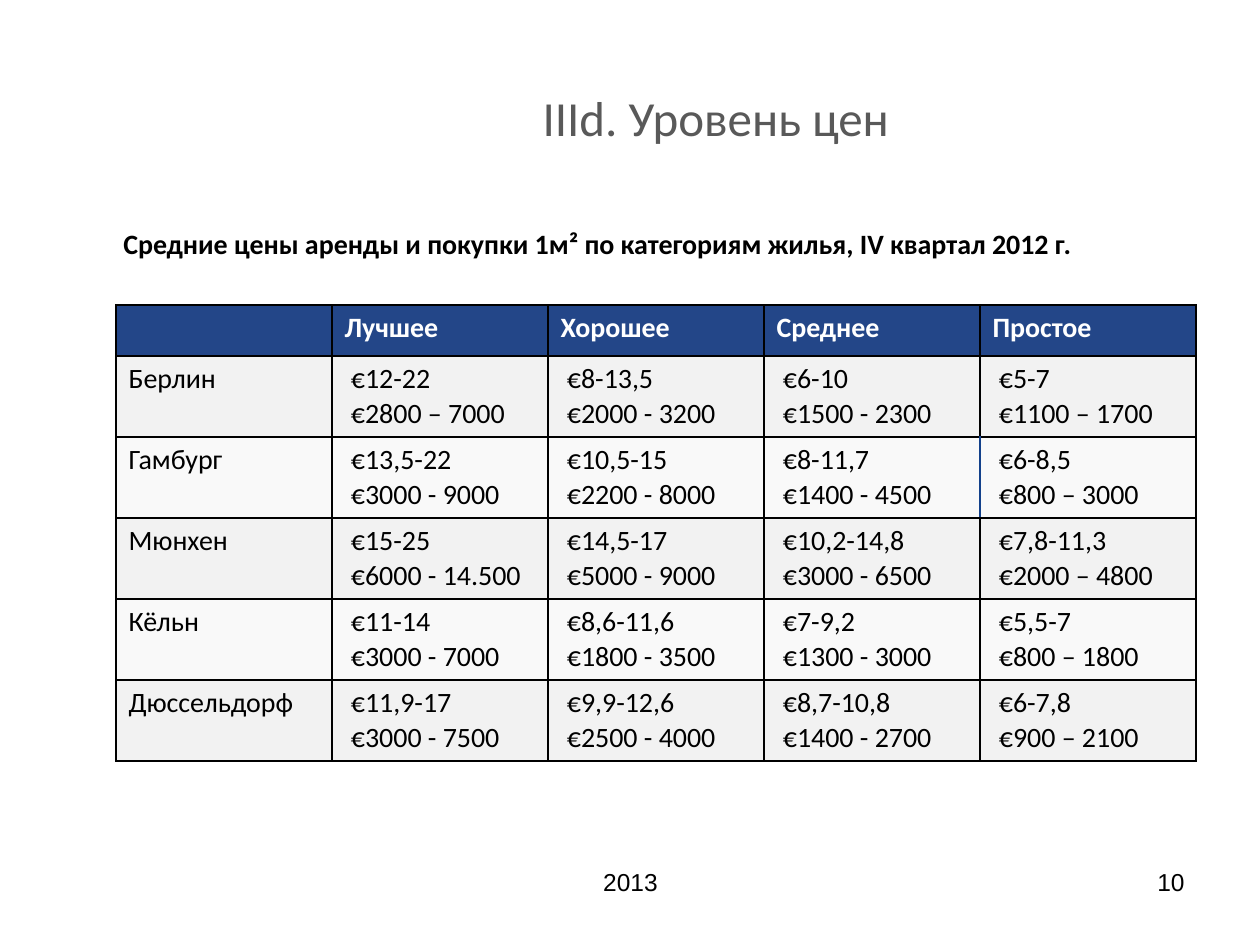
"""Build a slide with a table of housing prices in German cities."""
from dataclasses import dataclass

import pptx
import pptx.dml.color
import pptx.enum.text
import pptx.oxml.ns
import pptx.util
from lxml import etree

ALIGN = pptx.enum.text.PP_ALIGN
ANCHOR = pptx.enum.text.MSO_ANCHOR
SCALE = 914400 // 126


@dataclass(frozen=True)
class Theme:
    black: str = "000000"
    white: str = "FFFFFF"
    gray: str = "595959"
    navy: str = "234688"
    blue: str = "13418B"
    bands: tuple[str, str] = ("F2F2F2", "F9F9F9")
    face: str = "Calibri"
    plain: str = "Arial"
    title: int = 28
    body: int = 16
    foot: int = 14


@dataclass(frozen=True)
class Box:
    x: int
    y: int
    w: int
    h: int

    def emu(self) -> tuple[int, ...]:
        return tuple(px(n) for n in (self.x, self.y, self.w, self.h))


@dataclass(frozen=True)
class Style:
    size: int
    color: str
    face: str
    bold: bool = False
    align: ALIGN = ALIGN.LEFT


@dataclass(frozen=True)
class Label:
    text: str
    box: Box
    style: Style


@dataclass(frozen=True)
class City:
    name: str
    prices: tuple[str, ...]


THEME = Theme()
HEAD = Style(THEME.body, THEME.white, THEME.face, True)
CELL = Style(THEME.body, THEME.black, THEME.face)
BOLD = Style(THEME.body, THEME.black, THEME.face, True)
TITLE = Label("IIId. Уровень цен", Box(530, 38, 667, 158),
              Style(THEME.title, THEME.gray, THEME.face))
LABELS = (
    Label("Средние цены аренды и покупки 1м² по категориям жилья, IV квартал 2012 г.",
          Box(111, 220, 1086, 83), BOLD),
    Label("10", Box(903, 861, 294, 66),
          Style(THEME.foot, THEME.black, THEME.plain, align=ALIGN.RIGHT)),
    Label("2013", Box(431, 861, 399, 66),
          Style(THEME.foot, THEME.black, THEME.plain, align=ALIGN.CENTER)),
)
GRID = Box(116, 305, 1080, 456)
TOP_ROW, ROW, INDENT = 51, 81, 19
HEADS = ("", "Лучшее", "Хорошее", "Среднее", "Простое")
CITIES = (
    City("Берлин", ("€12-22\n€2800 – 7000", "€8-13,5\n€2000 - 3200",
                    "€6-10\n€1500 - 2300", "€5-7\n€1100 – 1700")),
    City("Гамбург", ("€13,5-22\n€3000 - 9000", "€10,5-15\n€2200 - 8000",
                     "€8-11,7\n€1400 - 4500", "€6-8,5\n€800 – 3000")),
    City("Мюнхен", ("€15-25\n€6000 - 14.500", "€14,5-17\n€5000 - 9000",
                    "€10,2-14,8\n€3000 - 6500", "€7,8-11,3\n€2000 – 4800")),
    City("Кёльн", ("€11-14\n€3000 - 7000", "€8,6-11,6\n€1800 - 3500",
                   "€7-9,2\n€1300 - 3000", "€5,5-7\n€800 – 1800")),
    City("Дюссельдорф", ("€11,9-17\n€3000 - 7500", "€9,9-12,6\n€2500 - 4000",
                         "€8,7-10,8\n€1400 - 2700", "€6-7,8\n€900 – 2100")),
)
ACCENTS = {(2, 3): "R", (2, 4): "L"}


def px(count: int) -> int:
    return pptx.util.Emu(count * SCALE)


def rgb(color: str) -> pptx.dml.color.RGBColor:
    return pptx.dml.color.RGBColor.from_string(color)


def write(frame, text: str, style: Style) -> None:
    frame.text = text
    for para in frame.paragraphs:
        para.alignment = style.align
        font = para.font
        font.size = pptx.util.Pt(style.size)
        font.name = style.face
        font.bold = style.bold
        font.color.rgb = rgb(style.color)


def place(slide, label: Label) -> None:
    frame = slide.shapes.add_textbox(*label.box.emu()).text_frame
    frame.word_wrap = True
    write(frame, label.text, label.style)


def border(cell, accent: str) -> None:
    name = pptx.oxml.ns.qn
    props = cell._tc.get_or_add_tcPr()
    for side in "LRTB":
        line = etree.SubElement(props, name(f"a:ln{side}"), w="12700")
        fill = etree.SubElement(line, name("a:solidFill"))
        color = THEME.blue if side == accent else THEME.black
        etree.SubElement(fill, name("a:srgbClr"), val=color)


def paint(cell, text: str, style: Style, fill: str, accent: str) -> None:
    write(cell.text_frame, text, style)
    border(cell, accent)
    cell.fill.solid()
    cell.fill.fore_color.rgb = rgb(fill)


def tabulate(slide) -> None:
    rows = [HEADS] + [(city.name, *city.prices) for city in CITIES]
    table = slide.shapes.add_table(len(rows), len(HEADS), *GRID.emu()).table
    table.first_row = table.horz_banding = False
    for col in table.columns:
        col.width = px(GRID.w // len(HEADS))
    for r, texts in enumerate(rows):
        table.rows[r].height = px(ROW if r else TOP_ROW)
        style = CELL if r else HEAD
        fill = THEME.bands[(r - 1) % 2] if r else THEME.navy
        for c, text in enumerate(texts):
            cell = table.cell(r, c)
            paint(cell, text, style, fill, ACCENTS.get((r, c), ""))
            if r and c:
                cell.margin_left = px(INDENT)


def main() -> None:
    deck = pptx.Presentation()
    deck.slide_width, deck.slide_height = px(1260), px(945)
    slide = deck.slides.add_slide(deck.slide_layouts[5])
    title = slide.shapes.title
    title.left, title.top, title.width, title.height = TITLE.box.emu()
    title.text_frame.vertical_anchor = ANCHOR.MIDDLE
    write(title.text_frame, TITLE.text, TITLE.style)
    for label in LABELS:
        place(slide, label)
    tabulate(slide)
    deck.save("out.pptx")


if __name__ == "__main__":
    main()
